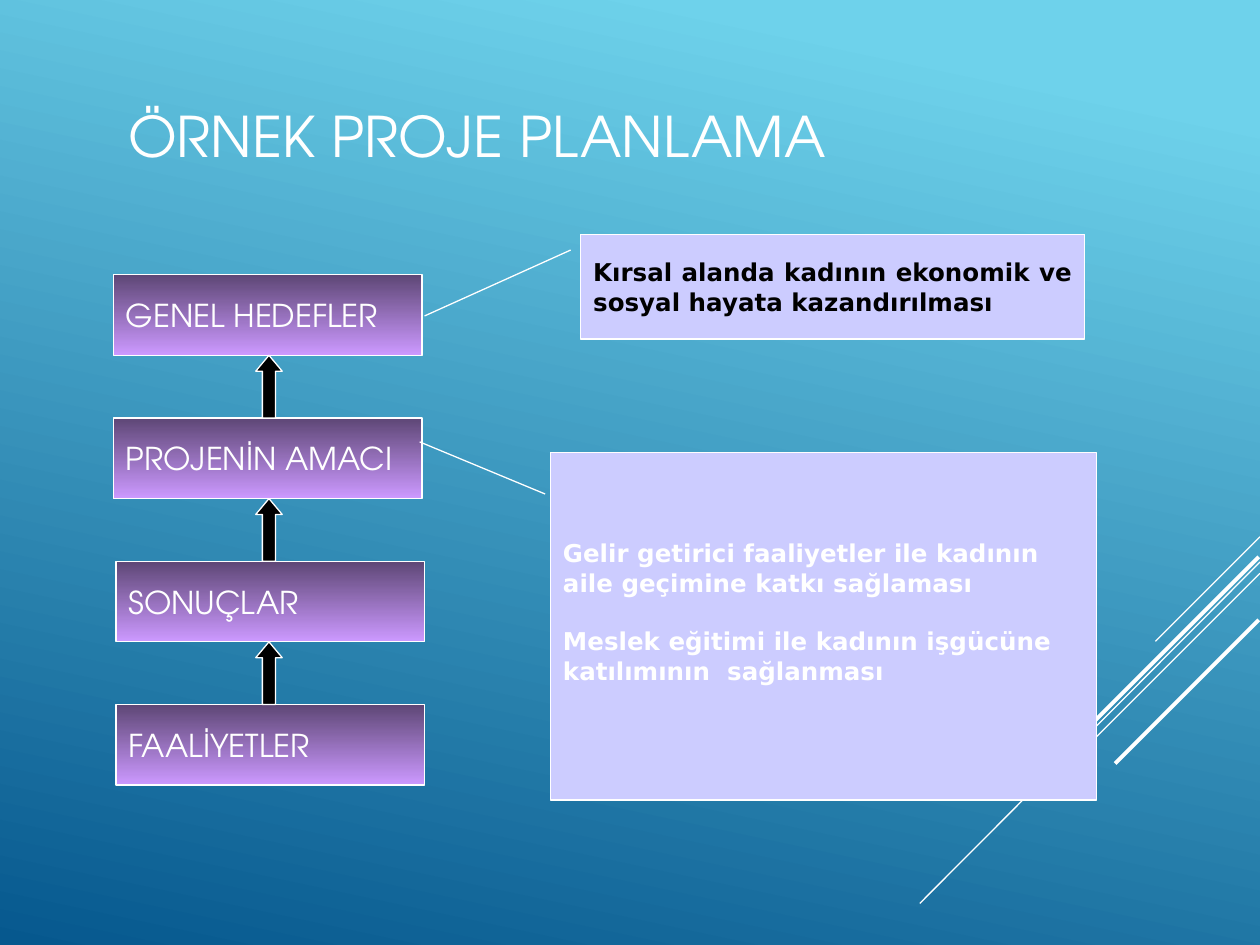
from lxml.etree import SubElement
from pptx import Presentation
from pptx.dml.color import RGBColor
from pptx.enum.shapes import MSO_CONNECTOR, MSO_SHAPE
from pptx.enum.text import MSO_ANCHOR, PP_ALIGN
from pptx.oxml.ns import qn
from pptx.util import Inches, Pt

WIDE, HIGH = Inches(10), Inches(7.5)
HEAD, BODY = "TeX Gyre Adventor", "DejaVu Sans"
WHITE, BLACK, LILAC = "FFFFFF", "000000", "CCCCFF"
STEPS = [
    (9, "GENEL HEDEFLER"),
    (9, "PROJENİN AMACI"),
    (9.2, "SONUÇLAR"),
    (9.2, "FAALİYETLER"),
]
TOP, TALL, PITCH = 29.07, 8.53, 15.16
RAYS = [
    (100, 56.8, 91.7, 67.87, 0.75),
    (100, 59.47, 73, 95.6, 0.75),
    (100, 60.67, 82.8, 83.6, 0.75),
    (99.9, 58.93, 84.2, 79.87, 2.25),
    (99.9, 65.6, 88.5, 80.8, 2.25),
]


def color(code):
    """Turn a hex string into a colour."""
    return RGBColor.from_string(code)


def place(x, y):
    """Turn percent shares of the slide into lengths."""
    return int(WIDE * x / 100), int(HIGH * y / 100)


def blend(fill, angle, *stops):
    """Fill with a two-stop gradient, angle counted anticlockwise."""
    fill.gradient()
    fill.gradient_angle = angle
    for stop, (spot, code) in zip(fill.gradient_stops, stops):
        stop.position = spot
        stop.color.rgb = color(code)


def write(frame, texts, font, size, code, bold=False, align=PP_ALIGN.LEFT, gap=0):
    """Write paragraphs in one style, with a gap between them."""
    frame.vertical_anchor = MSO_ANCHOR.MIDDLE
    for i, text in enumerate(texts):
        para = frame.add_paragraph() if i else frame.paragraphs[0]
        para.alignment = align
        para.space_before = Pt(gap if i else 0)
        run = para.add_run()
        run.text = text
        run.font.name, run.font.size, run.font.bold = font, Pt(size), bold
        run.font.color.rgb = color(code)


def draw_ray(slide, x1, y1, x2, y2, width):
    """Draw one white slanting line."""
    ray = slide.shapes.add_connector(MSO_CONNECTOR.STRAIGHT, *place(x1, y1), *place(x2, y2))
    ray.line.color.rgb = color(WHITE)
    ray.line.width = Pt(width)
    SubElement(ray._element.spPr, qn("a:effectLst"))


def draw_shape(slide, kind, x, y, w, h, code=None, bends=()):
    """Draw a preset shape with a thin white outline."""
    shape = slide.shapes.add_shape(kind, *place(x, y), *place(w, h))
    shape.shadow.inherit = False
    shape.line.color.rgb = color(WHITE)
    shape.line.width = Pt(0.75)
    for i, bend in enumerate(bends):
        shape.adjustments[i] = bend
    if code:
        shape.fill.solid()
        shape.fill.fore_color.rgb = color(code)
    return shape


def draw_step(slide, x, y, text):
    """Draw one purple box of the chain."""
    box = draw_shape(slide, MSO_SHAPE.RECTANGLE, x, y, 24.5, TALL)
    blend(box.fill, 270, (0, "5E4776"), (1, "CC99FF"))
    box.text_frame.word_wrap = False
    write(box.text_frame, [text], HEAD, 18, WHITE)


def draw_note(slide, spot, bends, texts, code, **style):
    """Draw a callout with bold text and return its frame."""
    note = draw_shape(slide, MSO_SHAPE.LINE_CALLOUT_1, *spot, LILAC, bends)
    note.text_frame.word_wrap = True
    write(note.text_frame, texts, BODY, 14, code, bold=True, **style)
    return note.text_frame


def draw_title(slide, text):
    """Draw the slide title."""
    box = slide.shapes.add_textbox(*place(9.2, 3.2), *place(71.7, 22.27))
    box.text_frame.word_wrap = True
    write(box.text_frame, [text], HEAD, 32, WHITE)


def main():
    """Build and save the slide."""
    deck = Presentation()
    deck.slide_width, deck.slide_height = WIDE, HIGH
    slide = deck.slides.add_slide(deck.slide_layouts[6])
    blend(slide.background.fill, 258, (0.1, "6ED2EB"), (1, "06588E"))
    for ray in RAYS:
        draw_ray(slide, *ray)
    draw_title(slide, "ÖRNEK PROJE PLANLAMA")
    for i, (x, text) in enumerate(STEPS):
        draw_step(slide, x, TOP + i * PITCH, text)
    for i in range(len(STEPS) - 1):
        y = TOP + TALL + i * PITCH
        draw_shape(slide, MSO_SHAPE.UP_ARROW, 20.3, y, 2.1, PITCH - TALL, BLACK, (0.5, 0.6))
    draw_note(
        slide, (46.1, 24.8, 40, 11.07), (0.15, -0.02, 0.78, -0.31),
        ["Kırsal alanda kadının ekonomik ve sosyal hayata kazandırılması"],
        BLACK, align=PP_ALIGN.JUSTIFY,
    )
    frame = draw_note(
        slide, (43.7, 47.87, 43.3, 36.8), (0.12, -0.01, -0.03, -0.24),
        ["Gelir getirici faaliyetler ile kadının aile geçimine katkı sağlaması",
         "Meslek eğitimi ile kadının işgücüne katılımının  sağlanması"],
        WHITE, gap=16.5,
    )
    frame.margin_bottom = Inches(0.28)
    deck.save("out.pptx")


if __name__ == "__main__":
    main()
